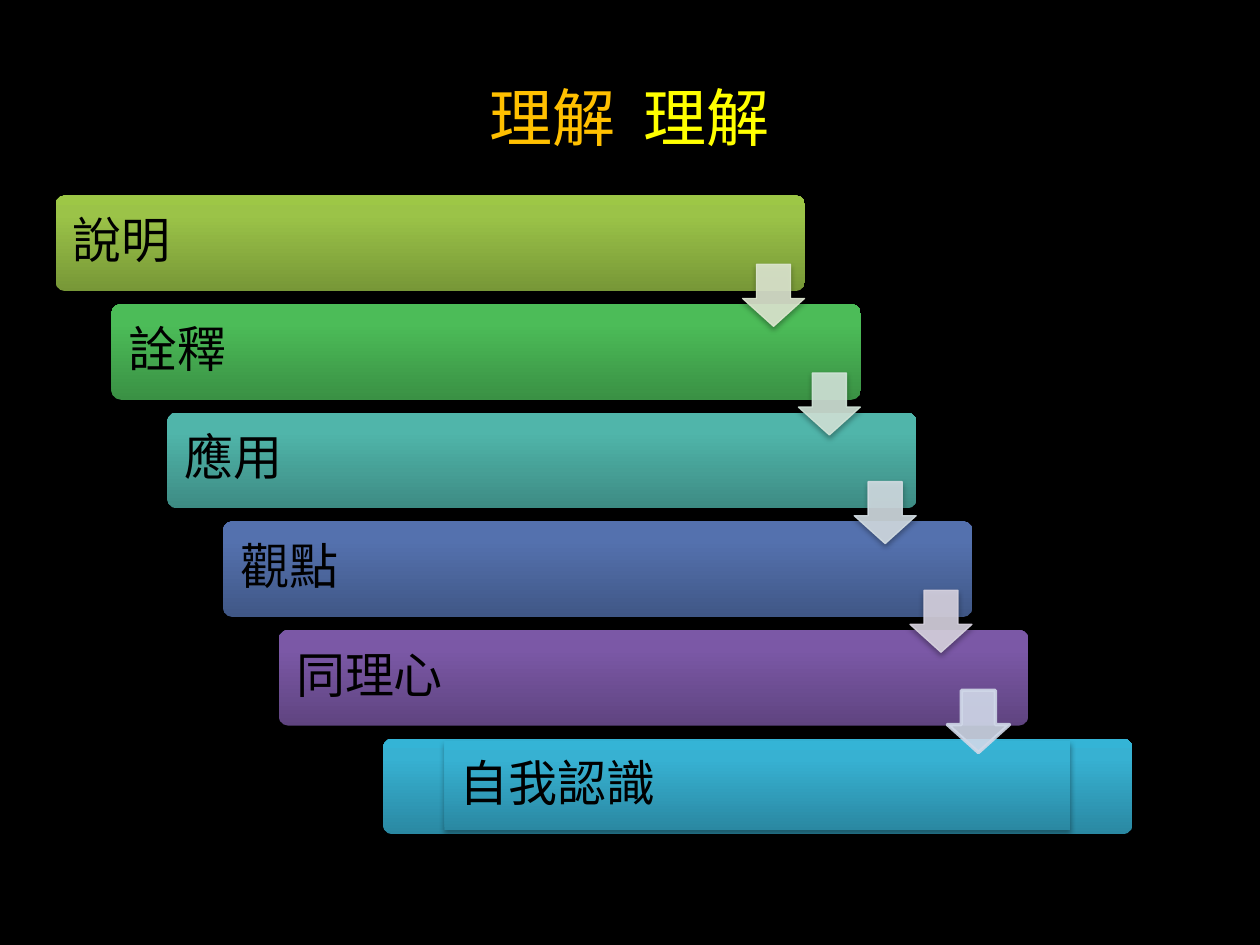
from lxml import etree
from pptx import Presentation
from pptx import util as u
from pptx.dml.color import RGBColor
from pptx.enum import shapes, text
from pptx.oxml import parse_xml
from pptx.oxml.ns import nsdecls, qn

FONT = "Noto Sans CJK SC"
INK = {"back": "000000", "text": "000000", "gold": "FFC000", "lemon": "FFFF00"}
# label, gradient from bottom to top, arrow below the bar
STEPS = [
    ("說明", ("779737", "9BC348", "9DC746"), "DEE7D1"),
    ("詮釋", ("3A9144", "4CBC58", "4ABF57"), "D2E5D9"),
    ("應用", ("3D8B83", "50B5AA", "4EB8AC"), "D2DCE2"),
    ("觀點", ("405786", "5471AE", "5271B0"), "D8D3E0"),
    ("同理心", ("5F4480", "7B58A6", "7C57A8"), "D0D8E8"),
    ("自我認識", ("2A88A2", "37B1D2", "34B4D6"), None),
]
DX, DY = 1.125, 2.19


def style(shape, grad=None, tint=None, width=0, shade=True):
    """Give a shape a gradient or a clear tint, its outline and a soft shadow."""
    props = shape.element.spPr
    if grad:
        stops = "".join(
            f'<a:gs pos="{pos}"><a:srgbClr val="{hue}"/></a:gs>'
            for pos, hue in zip((0, 80000, 100000), grad))
        props.append(parse_xml(
            f'<a:gradFill {nsdecls("a")} rotWithShape="1"><a:gsLst>{stops}</a:gsLst>'
            '<a:lin ang="16200000" scaled="0"/></a:gradFill>'))
        shape.line.fill.background()
    else:
        shape.fill.solid()
        shape.fill.fore_color.rgb = RGBColor.from_string(tint)
        shape.line.color.rgb = RGBColor.from_string(tint)
        shape.line.width = u.Pt(width)
        for hue in props.iter(qn("a:srgbClr")):
            etree.SubElement(hue, qn("a:alpha"), val="90000")
    shape.shadow.inherit = False
    if shade:
        props.find(qn("a:effectLst")).append(parse_xml(
            f'<a:outerShdw {nsdecls("a")} blurRad="40000" dist="23000" dir="5400000" '
            'rotWithShape="0"><a:srgbClr val="000000"><a:alpha val="35000"/>'
            '</a:srgbClr></a:outerShdw>'))


def set_font(par, size, hue):
    par.font.size = u.Pt(size)
    par.font.color.rgb = RGBColor.from_string(hue)
    par.font.name = FONT
    for run in par.runs:
        run.font.size = u.Pt(size)
        run.font.name = FONT
        if run.font.color.type is None:
            run.font.color.rgb = RGBColor.from_string(hue)
    for latin in list(par._p.iter(qn("a:latin"))):
        latin.addnext(latin.makeelement(qn("a:ea"), {"typeface": FONT}))


deck = Presentation()
deck.slide_width, deck.slide_height = u.Cm(25.4), u.Cm(19.05)
slide = deck.slides.add_slide(deck.slide_layouts[6])
slide.background.fill.solid()
slide.background.fill.fore_color.rgb = RGBColor.from_string(INK["back"])
art = slide.shapes

# Title: one widely spaced blank parts the two words
title = art.add_textbox(u.Cm(1.27), u.Cm(0.76), u.Cm(22.86), u.Cm(3.18))
frame = title.text_frame
frame.word_wrap = True
frame.vertical_anchor = text.MSO_ANCHOR.MIDDLE
par = frame.paragraphs[0]
par.alignment = text.PP_ALIGN.CENTER
for word, hue in (("理解", "gold"), (" ", "gold"), ("理解", "lemon")):
    run = par.add_run()
    run.text = word
    run.font.color.rgb = RGBColor.from_string(INK[hue])
    if word == " ":
        run.font._element.set("spc", "800")
set_font(par, 36, INK["gold"])

# Staircase of bars; the last one stands further out with a filled label
for i, (name, grad, _) in enumerate(STEPS):
    last = i == len(STEPS) - 1
    left, top = 7.72 if last else 1.12 + i * DX, 3.94 + i * DY
    bar = art.add_shape(shapes.MSO_SHAPE.ROUNDED_RECTANGLE,
                        u.Cm(left), u.Cm(top), u.Cm(15.11), u.Cm(1.93))
    bar.adjustments[0] = 0.1
    style(bar, grad)

    place = (u.Cm(left + (1.24 if last else 0.05)), u.Cm(top + 0.05),
             u.Cm(12.62), u.Cm(1.8))
    if last:
        label = art.add_shape(shapes.MSO_SHAPE.RECTANGLE, *place)
        style(label, grad)
    else:
        label = art.add_textbox(*place)
    frame = label.text_frame
    frame.word_wrap = True
    frame.vertical_anchor = text.MSO_ANCHOR.MIDDLE
    frame.margin_left = frame.margin_right = u.Cm(0.3)
    frame.margin_top = frame.margin_bottom = u.Cm(0.3)
    par = frame.paragraphs[0]
    par.text = name
    par.alignment = text.PP_ALIGN.LEFT
    par.line_spacing = 0.9
    par.space_after = u.Pt(9.8)
    set_font(par, 28, INK["text"])

# Arrows from each bar to the next
for i, (_, _, tint) in enumerate(STEPS[:-1]):
    last = i == len(STEPS) - 2
    left, top = (19.1, 13.92) if last else (14.97 + i * DX, 5.33 + i * DY)
    arrow = art.add_shape(shapes.MSO_SHAPE.DOWN_ARROW,
                          u.Cm(left), u.Cm(top), u.Cm(1.25), u.Cm(1.25))
    arrow.adjustments[0], arrow.adjustments[1] = 0.55, 0.45
    style(arrow, tint=tint, width=2 if last else 0.75, shade=not last)

deck.save("out.pptx")
